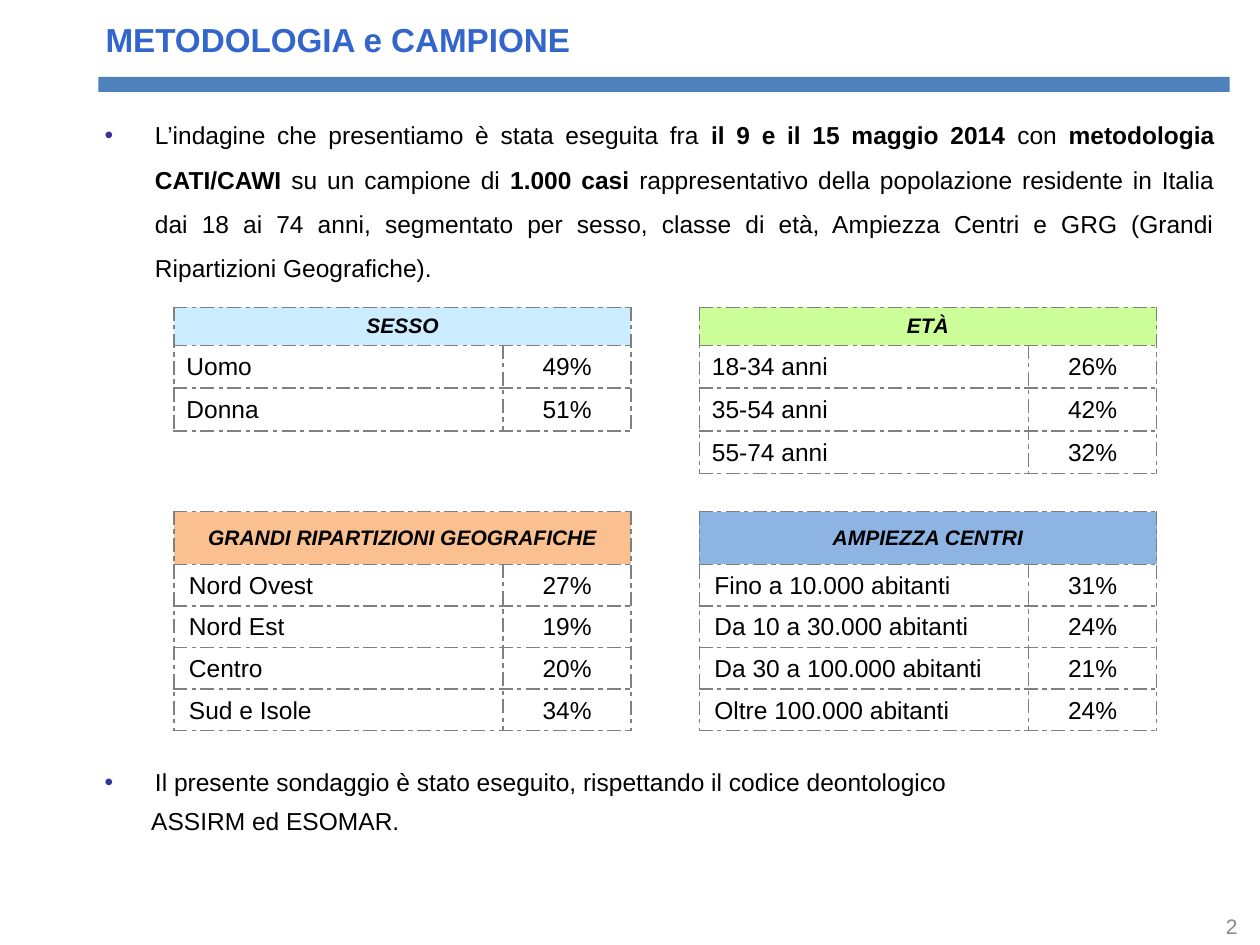
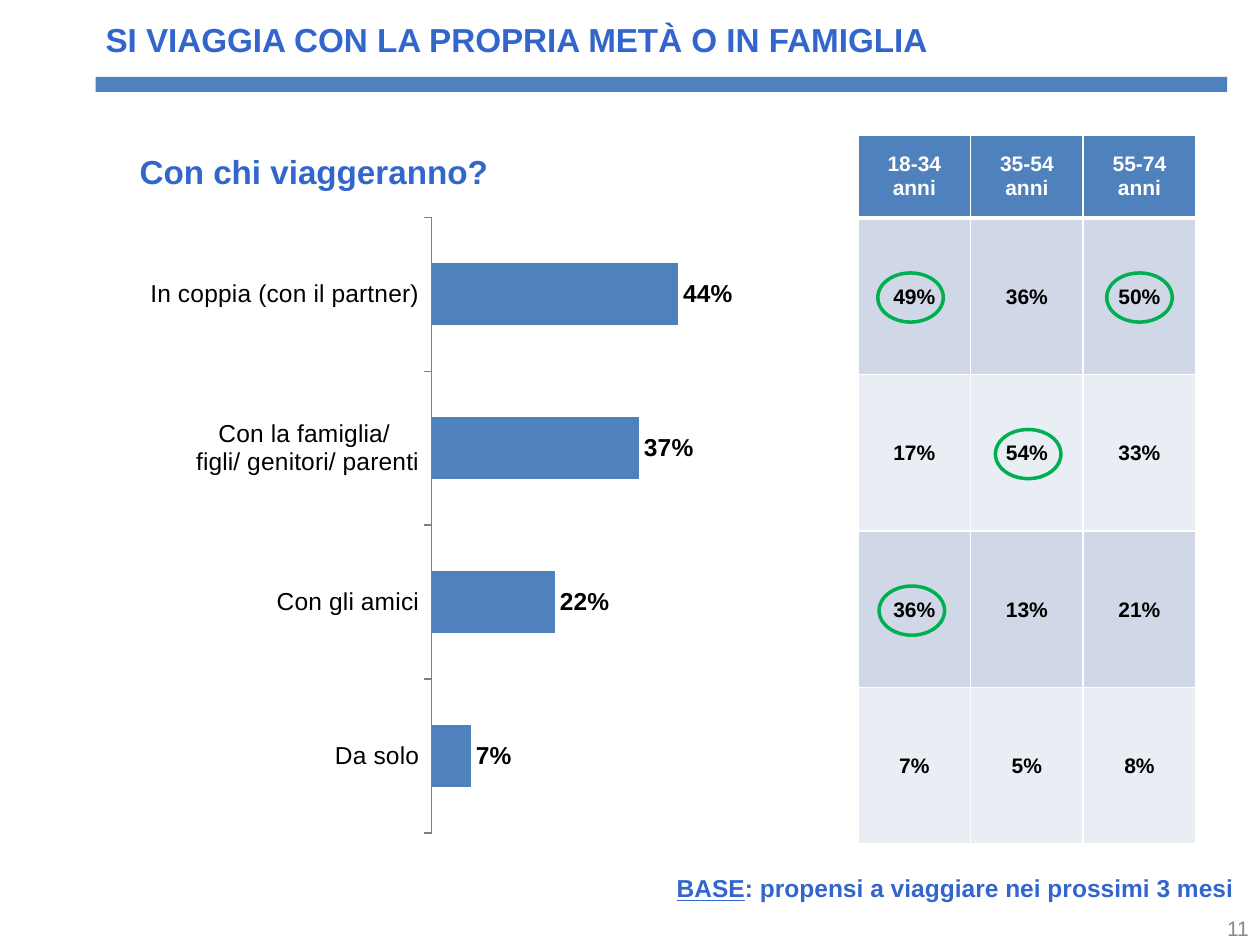
from collections import namedtuple

from lxml import etree
from pptx import Presentation
from pptx.chart.data import CategoryChartData
from pptx.dml.color import RGBColor
from pptx.enum.chart import XL_CHART_TYPE, XL_LABEL_POSITION, XL_TICK_MARK
from pptx.enum.shapes import MSO_SHAPE
from pptx.enum.text import MSO_ANCHOR, PP_ALIGN
from pptx.oxml import parse_xml
from pptx.oxml.ns import nsdecls, qn
from pptx.util import Inches, Pt

BAR_CLUSTERED = XL_CHART_TYPE.BAR_CLUSTERED
OUTSIDE_END = XL_LABEL_POSITION.OUTSIDE_END
TICK_OUTSIDE = XL_TICK_MARK.OUTSIDE
RECTANGLE, OVAL = MSO_SHAPE.RECTANGLE, MSO_SHAPE.OVAL
TOP, MIDDLE = MSO_ANCHOR.TOP, MSO_ANCHOR.MIDDLE
LEFT, CENTER, RIGHT, JUSTIFY = PP_ALIGN.LEFT, PP_ALIGN.CENTER, PP_ALIGN.RIGHT, PP_ALIGN.JUSTIFY

COLUMNS, ROWS = 100, 75
UNIT = Inches(0.1)
FONT = "Arial"
BLACK, WHITE, GRAY = "000000", "FFFFFF", "808080"
TITLE_BLUE, BAND_BLUE, BULLET_BLUE = "3366CC", "4F81BD", "333399"
NUMBER_GRAY, MARK_GREEN = "898989", "00B050"
STRIPES = ("D0D8E8", "E9EDF4")
BODY_INSETS = (1, 0.5, 1, 0.5)
TIGHT_INSETS = (0.1, 0.1, 0.1, 0)

Box = namedtuple("Box", "left top width height")
Run = namedtuple("Run", "text bold underline", defaults=(False, False))


def units(count):
    return round(count * UNIT)


def place(box):
    return [units(length) for length in box]


def color(value):
    return RGBColor.from_string(value)


def style_font(font, size, value, bold=False, italic=False):
    font.name = FONT
    font.size = Pt(size)
    font.bold = bold
    font.italic = italic
    font.color.rgb = color(value)


def set_insets(target, insets):
    target.margin_left, target.margin_top, target.margin_right, target.margin_bottom = map(units, insets)


def write_paragraph(paragraph, runs, size, value, align=LEFT, italic=False):
    paragraph.alignment = align
    for item in runs:
        run = paragraph.add_run()
        run.text = item.text
        style_font(run.font, size, value, item.bold, italic)
        if item.underline:
            run.font.underline = True


def add_text(slide, box, runs, size, value, align=LEFT, anchor=TOP, insets=BODY_INSETS):
    frame = slide.shapes.add_textbox(*place(box)).text_frame
    frame.word_wrap = True
    frame.vertical_anchor = anchor
    set_insets(frame, insets)
    write_paragraph(frame.paragraphs[0], runs, size, value, align)
    return frame


def set_indent(paragraph, margin, first=0):
    properties = paragraph._p.get_or_add_pPr()
    properties.set("marL", str(units(margin)))
    properties.set("indent", str(units(first)))
    return properties


def add_bullet(paragraph):
    properties = set_indent(paragraph, 4, -4)
    tint = etree.SubElement(properties, qn("a:buClr"))
    etree.SubElement(tint, qn("a:srgbClr"), val=BULLET_BLUE)
    etree.SubElement(properties, qn("a:buFont"), typeface=FONT)
    etree.SubElement(properties, qn("a:buChar"), char="•")


def add_bullet_text(slide, box, runs):
    frame = add_text(slide, box, runs, 14, BLACK, JUSTIFY, insets=(0, 0, 0, 0))
    add_bullet(frame.paragraphs[0])
    return frame


def set_borders(cell, value, dash="solid", bottom=1):
    properties = cell._tc.get_or_add_tcPr()
    for index, side in enumerate("LRTB"):
        width = Pt(bottom if side == "B" else 1)
        properties.insert(index, parse_xml(
            f'<a:ln{side} {nsdecls("a")} w="{width}"><a:solidFill><a:srgbClr val="{value}"/>'
            f'</a:solidFill><a:prstDash val="{dash}"/></a:ln{side}>'))


def fill_cell(cell, text, size, value, fill=None, align=CENTER, bold=False, italic=False,
              insets=BODY_INSETS):
    cell.vertical_anchor = MIDDLE
    set_insets(cell, insets)
    if fill:
        cell.fill.solid()
        cell.fill.fore_color.rgb = color(fill)
    else:
        cell.fill.background()
    write_paragraph(cell.text_frame.paragraphs[0], [Run(text, bold)], size, value, align, italic)


def add_grid(slide, box, widths, heights):
    table = slide.shapes.add_table(len(heights), len(widths), *place(box)).table
    table.first_row = table.horz_banding = False
    for column, width in zip(table.columns, widths):
        column.width = units(width)
    for row, height in zip(table.rows, heights):
        row.height = units(height)
    return table


def add_sample_table(slide, box, heading, fill, shares, header_height, row_height, margin):
    heights = [header_height] + [row_height] * len(shares)
    table = add_grid(slide, box, (box.width * 0.72, box.width * 0.28), heights)
    table.cell(0, 0).merge(table.cell(0, 1))
    fill_cell(table.cell(0, 0), heading, 12, BLACK, fill, bold=True, italic=True)
    for row, (label, share) in enumerate(shares, 1):
        fill_cell(table.cell(row, 0), label, 14, BLACK, align=LEFT, insets=(margin, 0.1, 0.1, 0))
        fill_cell(table.cell(row, 1), share, 14, BLACK, insets=TIGHT_INSETS)
    for cell in table.iter_cells():
        set_borders(cell, GRAY, "sysDashDot")


def add_age_table(slide, box, header_height, ages, shares):
    row_height = (box.height - header_height) / len(shares)
    column_width = box.width / len(ages)
    table = add_grid(slide, box, [column_width] * len(ages),
                     [header_height] + [row_height] * len(shares))
    for column, age in enumerate(ages):
        cell = table.cell(0, column)
        fill_cell(cell, age, 12, WHITE, BAND_BLUE, bold=True)
        set_borders(cell, WHITE, bottom=3)
    for row, values in enumerate(shares):
        for column, share in enumerate(values):
            cell = table.cell(row + 1, column)
            fill_cell(cell, share, 12, BLACK, STRIPES[row % 2], bold=True, insets=TIGHT_INSETS)
            set_borders(cell, WHITE)


def add_highlights(slide, box, header_height, row_count, column_count, marks):
    row_height = (box.height - header_height) / row_count
    column_width = box.width / column_count
    width, height = 5.2, 3.9
    for row, column, nudge in marks:
        center = box.left + (column + 0.5) * column_width + nudge
        middle = box.top + header_height + (row + 0.5) * row_height + 0.1
        oval = slide.shapes.add_shape(
            OVAL, *place(Box(center - width / 2, middle - height / 2, width, height)))
        oval.shadow.inherit = False
        oval.fill.background()
        oval.line.color.rgb = color(MARK_GREEN)
        oval.line.width = Pt(2)


def set_plot_layout(chart, left, top, width, height):
    plot_area = chart._chartSpace.chart.plotArea
    for layout in plot_area.findall(qn("c:layout")):
        plot_area.remove(layout)
    plot_area.insert(0, parse_xml(
        f'<c:layout {nsdecls("c")}><c:manualLayout><c:layoutTarget val="inner"/>'
        f'<c:xMode val="edge"/><c:yMode val="edge"/><c:x val="{left}"/><c:y val="{top}"/>'
        f'<c:w val="{width}"/><c:h val="{height}"/></c:manualLayout></c:layout>'))


def add_companion_chart(slide, box, companions):
    data = CategoryChartData(number_format="0%")
    data.categories = [label for label, share in companions]
    data.add_series("Con chi viaggeranno?", [share for label, share in companions])
    chart = slide.shapes.add_chart(BAR_CLUSTERED, *place(box), data).chart
    chart.has_title = chart.has_legend = False
    style_font(chart.font, 14, BLACK)
    set_plot_layout(chart, 0.45, 0.1, 0.31, 0.85)

    category_axis = chart.category_axis
    category_axis.reverse_order = True
    category_axis.major_tick_mark = TICK_OUTSIDE
    category_axis.has_major_gridlines = False
    category_axis.format.line.color.rgb = color(GRAY)
    style_font(category_axis.tick_labels.font, 14, BLACK)

    value_axis = chart.value_axis
    value_axis.minimum_scale, value_axis.maximum_scale = 0, 0.5
    value_axis.has_major_gridlines = False
    value_axis.visible = False

    plot = chart.plots[0]
    plot.gap_width = 150
    plot.vary_by_categories = False
    bars = plot.series[0].format
    bars.fill.solid()
    bars.fill.fore_color.rgb = color(BAND_BLUE)
    plot.has_data_labels = True
    labels = plot.data_labels
    labels.show_value = True
    labels.position = OUTSIDE_END
    labels.number_format, labels.number_format_is_linked = "0%", False
    style_font(labels.font, 14, BLACK, bold=True)


def add_frame(presentation, title, band_left, number, number_box):
    slide = presentation.slides.add_slide(presentation.slide_layouts[6])
    band = slide.shapes.add_shape(RECTANGLE, *place(Box(band_left, 6.1, 89.8, 1.2)))
    band.shadow.inherit = False
    band.fill.solid()
    band.fill.fore_color.rgb = color(BAND_BLUE)
    band.line.fill.background()
    add_text(slide, Box(7.4, 1, 90.3, 4.2), [Run(title, True)], 19, TITLE_BLUE)
    add_text(slide, number_box, [Run(number)], 12, NUMBER_GRAY, RIGHT, MIDDLE)
    return slide


def build_sample_slide(presentation):
    slide = add_frame(presentation, "METODOLOGIA e CAMPIONE", 7.8, "2", Box(75.9, 72.7, 23.3, 1.6))
    survey = add_bullet_text(slide, Box(8.3, 8.4, 88.1, 15), [
        Run("L’indagine che presentiamo è stata eseguita fra "),
        Run("il 9 e il 15 maggio 2014 ", True),
        Run("con "),
        Run("metodologia CATI/CAWI ", True),
        Run("su un campione di "),
        Run("1.000 casi", True),
        Run(" rappresentativo della popolazione residente in Italia dai 18 ai 74 anni, segmentato "
            "per sesso, classe di età, Ampiezza Centri e GRG (Grandi Ripartizioni Geografiche)."),
    ])
    survey.paragraphs[0].line_spacing = 1.5

    left, right, width = 13.8, 55.5, 36.3
    upper = (24.4, 3, 3.4, 1)
    lower = (40.6, 4.2, 3.3, 1.2)
    tables = [
        (left, upper, "SESSO", "CCECFF", [("Uomo", "49%"), ("Donna", "51%")]),
        (right, upper, "ETÀ", "CCFF99",
         [("18-34 anni", "26%"), ("35-54 anni", "42%"), ("55-74 anni", "32%")]),
        (left, lower, "GRANDI RIPARTIZIONI GEOGRAFICHE", "FAC090",
         [("Nord Ovest", "27%"), ("Nord Est", "19%"), ("Centro", "20%"), ("Sud e Isole", "34%")]),
        (right, lower, "AMPIEZZA CENTRI", "8EB4E3",
         [("Fino a 10.000 abitanti", "31%"), ("Da 10 a 30.000 abitanti", "24%"),
          ("Da 30 a 100.000 abitanti", "21%"), ("Oltre 100.000 abitanti", "24%")]),
    ]
    for start, (top, header_height, row_height, margin), heading, fill, shares in tables:
        box = Box(start, top, width, header_height + row_height * len(shares))
        add_sample_table(slide, box, heading, fill, shares, header_height, row_height, margin)

    ethics = add_bullet_text(slide, Box(8.3, 60.9, 88.1, 5.5), [
        Run("Il presente sondaggio è stato eseguito, rispettando il codice deontologico")])
    bodies = ethics.add_paragraph()
    write_paragraph(bodies, [Run("ASSIRM ed ESOMAR.")], 14, BLACK, JUSTIFY)
    bodies.space_before = Pt(5)
    set_indent(bodies, 3.7)


def build_companion_slide(presentation):
    slide = add_frame(presentation, "SI VIAGGIA CON LA PROPRIA METÀ O IN FAMIGLIA", 7.6, "11",
                      Box(76.8, 72.9, 23.3, 1.6))
    add_companion_chart(slide, Box(2, 11.5, 71.7, 57.5), [
        ("In coppia (con il partner)", 0.44),
        ("Con la famiglia/ \nfigli/ genitori/ parenti", 0.37),
        ("Con gli amici", 0.22),
        ("Da solo", 0.07),
    ])
    ages = ("18-34 anni", "35-54 anni", "55-74 anni")
    shares = [("49%", "36%", "50%"), ("17%", "54%", "33%"),
              ("36%", "13%", "21%"), ("7%", "5%", "8%")]
    table_box, header_height = Box(68.1, 10.7, 26.8, 56.3), 6.6
    add_age_table(slide, table_box, header_height, ages, shares)
    add_highlights(slide, table_box, header_height, len(shares), len(ages),
                   [(0, 0, -0.3), (0, 2, 0), (1, 1, 0.1), (2, 0, -0.2)])
    add_text(slide, Box(10.1, 11.5, 40, 4.2), [Run("Con chi viaggeranno?", True)], 19, TITLE_BLUE)
    add_text(slide, Box(46.9, 68.8, 52, 3.4),
             [Run("BASE", True, True), Run(": propensi a viaggiare nei prossimi 3 mesi", True)],
             14, TITLE_BLUE, RIGHT)


def main():
    presentation = Presentation()
    presentation.slide_width, presentation.slide_height = units(COLUMNS), units(ROWS)
    build_sample_slide(presentation)
    build_companion_slide(presentation)
    presentation.save("out.pptx")


if __name__ == "__main__":
    main()
